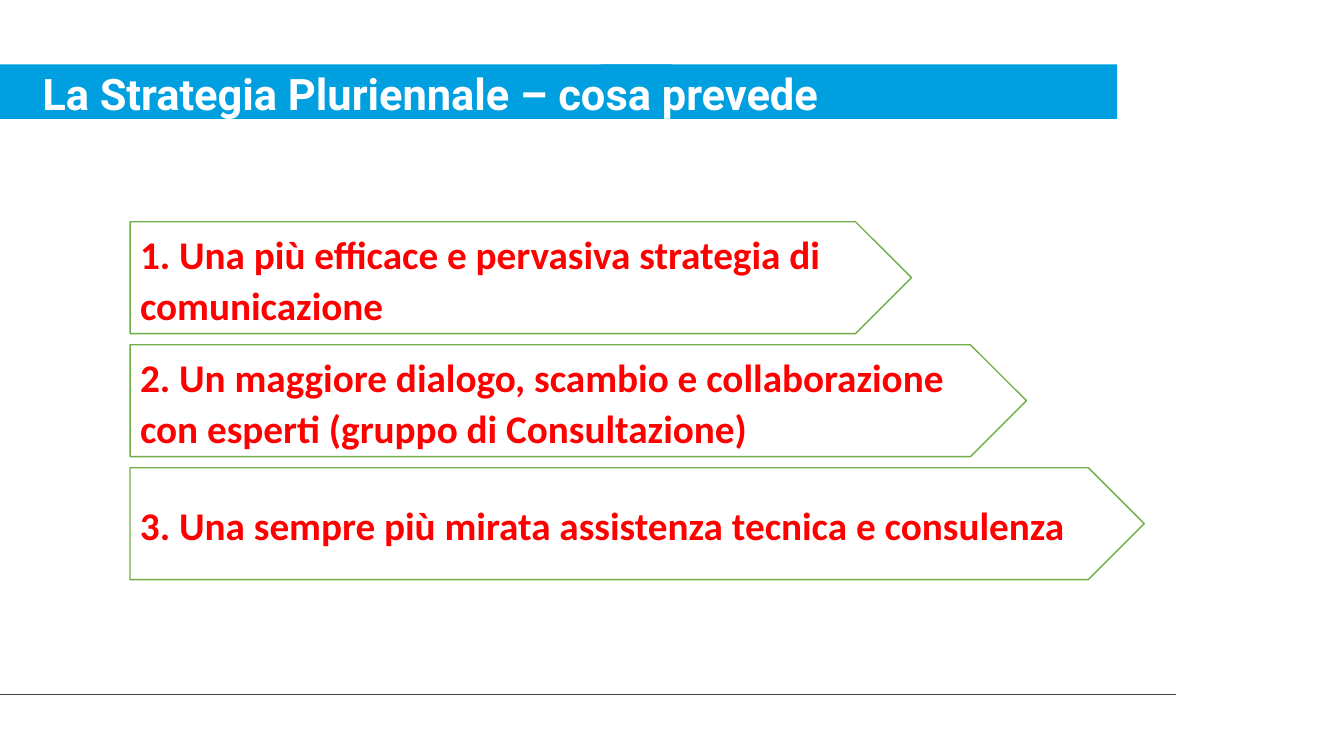
from pptx import Presentation
from pptx.dml.color import RGBColor
from pptx.enum.shapes import MSO_CONNECTOR, MSO_SHAPE
from pptx.enum.text import MSO_ANCHOR, PP_ALIGN
from pptx.oxml.ns import qn
from pptx.util import Inches, Pt
from lxml.etree import SubElement

# Content
TITLE = "La Strategia Pluriennale – cosa prevede"
STEPS = [  # wording, arrow width
    ("1. Una più efficace e pervasiva strategia di comunicazione", 7.75),
    ("2. Un maggiore dialogo, scambio e collaborazione con esperti "
     "(gruppo di Consultazione)", 8.89),
    ("3. Una sempre più mirata assistenza tecnica e consulenza", 10.06),
]
COLOURS = {"band": "009FE0", "white": "FFFFFF", "green": "70AD47",
           "red": "FF0000", "rule": "404140"}

# Layout in inches
WIDTH, HEIGHT = 13.33, 7.5
BAND_TOP, BAND_HEIGHT = 0.64, 0.54
BAND_PARTS = [(0, WIDTH / 4), (WIDTH / 4, WIDTH / 4), (5.96, 5.12)]
STEP_LEFT, STEP_TOP, STEP_HEIGHT, STEP_PITCH = 1.29, 2.2, 1.11, 1.22
RULE_TOP, RULE_WIDTH = 6.89, WIDTH * 7 / 8


def colour(name):
    return RGBColor.from_string(COLOURS[name])


def add_block(page, kind, left, top, width, height, fill, line=None):
    block = page.shapes.add_shape(
        kind, Inches(left), Inches(top), Inches(width), Inches(height))
    block.shadow.inherit = False
    block.fill.solid()
    block.fill.fore_color.rgb = colour(fill)
    if line:
        block.line.color.rgb = colour(line)
        block.line.width = Pt(1)
    else:
        block.line.fill.background()
    return block


def write(box, text, font, size, ink, spacing):
    box.text_frame.word_wrap = True
    para = box.text_frame.paragraphs[0]
    para.alignment = PP_ALIGN.LEFT
    para.line_spacing = spacing
    span = para.add_run()
    span.text = text
    span.font.name = font
    span.font.size = Pt(size)
    span.font.bold = True
    span.font.color.rgb = colour(ink)
    return para


deck = Presentation()
deck.slide_width, deck.slide_height = Inches(WIDTH), Inches(HEIGHT)
page = deck.slides.add_slide(deck.slide_layouts[6])

# Bottom rule
rule = page.shapes.add_connector(
    MSO_CONNECTOR.STRAIGHT, 0, Inches(RULE_TOP), Inches(RULE_WIDTH), Inches(RULE_TOP))
rule.line.color.rgb = colour("rule")
rule.line.width = Pt(1)
SubElement(rule.line._get_or_add_ln().getparent(), qn("a:effectLst"))

# Title band
for left, width in BAND_PARTS:
    add_block(page, MSO_SHAPE.RECTANGLE, left, BAND_TOP, width, BAND_HEIGHT, "band")

# Title
title = page.shapes.add_textbox(0, Inches(0.6), Inches(10.94), Inches(0.53))
title.text_frame.margin_left = Inches(0.42)
title.text_frame.margin_top = Inches(0.12)
write(title, TITLE, "Roboto", 31, "white", 0.9)

# Arrows, one per step
for row, (text, width) in enumerate(STEPS):
    arrow = add_block(page, MSO_SHAPE.PENTAGON, STEP_LEFT, STEP_TOP + row * STEP_PITCH,
                      width, STEP_HEIGHT, "white", "green")
    arrow.text_frame.vertical_anchor = MSO_ANCHOR.MIDDLE
    para = write(arrow, text, "Calibri", 28, "red", 1.07)
    para.space_after = Pt(8)

deck.save("out.pptx")
